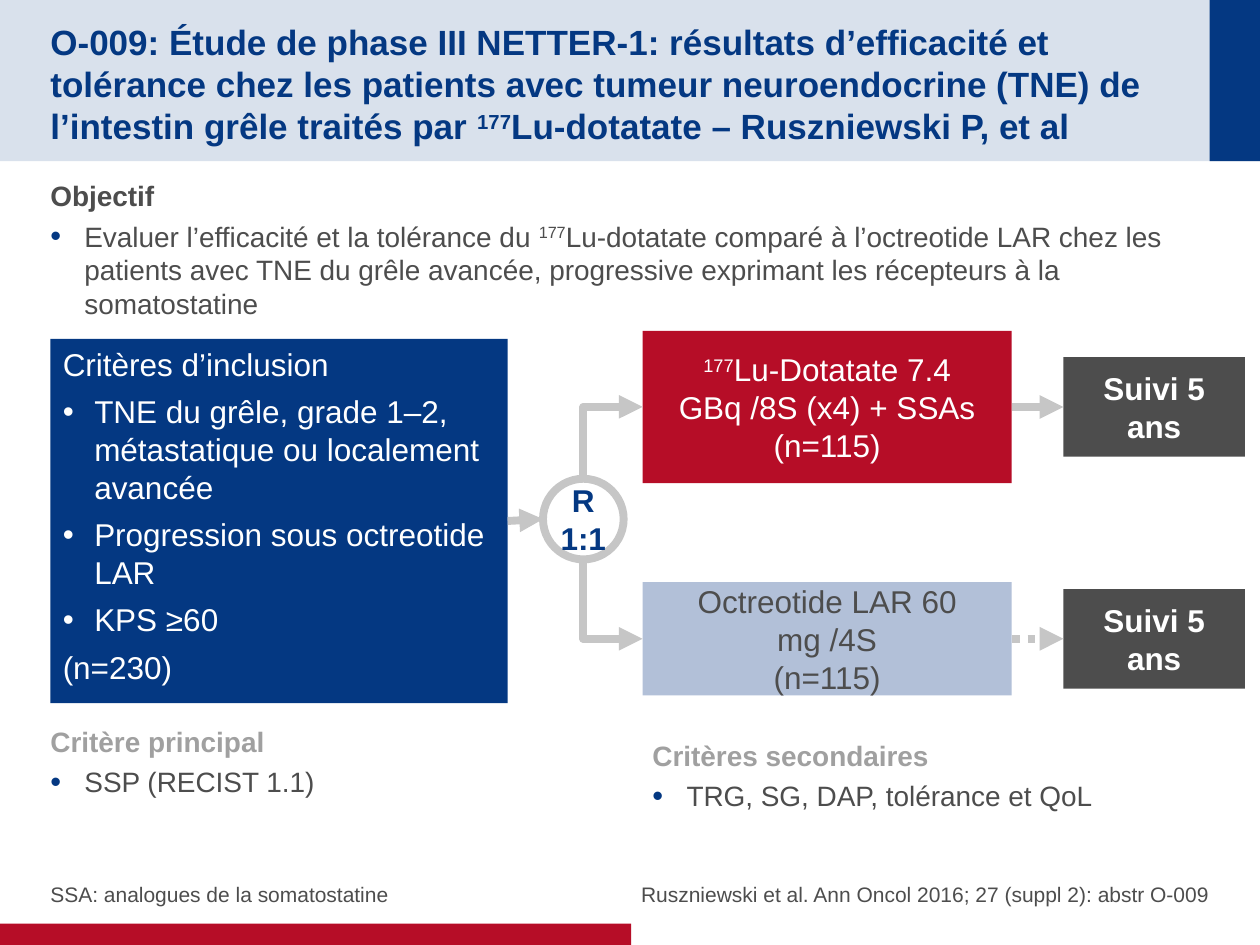
from lxml.etree import SubElement
from pptx import Presentation
from pptx.dml.color import RGBColor
from pptx.enum.dml import MSO_LINE
from pptx.enum.shapes import MSO_CONNECTOR, MSO_SHAPE
from pptx.enum.text import MSO_ANCHOR, MSO_AUTO_SIZE, PP_ALIGN
from pptx.oxml.ns import qn
from pptx.util import Inches, Pt

NAVY, RED, DARK, GREY = "043882", "B60D27", "4D4D4D", "C6C6C6"
PALE, BLUE, SOFT, WHITE = "D9E1EC", "B2C0D8", "A0A0A0", "FFFFFF"
LEFT, MID, RIGHT = PP_ALIGN.LEFT, PP_ALIGN.CENTER, PP_ALIGN.RIGHT
color = RGBColor.from_string

deck = Presentation()
deck.slide_width, deck.slide_height = Inches(10), Inches(7.5)
cell = deck.slide_width // 100  # grid of 100 columns by 75 rows
slide = deck.slides.add_slide(deck.slide_layouts[5])
shapes = slide.shapes


def block(at, fill=None, kind=MSO_SHAPE.RECTANGLE):
    """Add a shape without outline; at is left, top, width, height in cells."""
    shape = shapes.add_shape(kind, *[round(v * cell) for v in at])
    shape.shadow.inherit = False
    shape.line.fill.background()
    if fill:
        shape.fill.solid()
        shape.fill.fore_color.rgb = color(fill)
    else:
        shape.fill.background()
    return shape


def write(shape, paras, size, ink, bold=False, align=LEFT, gap=0,
          pads=(0, 0.5, 0, 0.5), anchor=MSO_ANCHOR.TOP, wrap=True):
    """Fill a shape with (text, changes) pairs; ^ marks off superscripts."""
    frame = shape.text_frame
    sides = ("margin_left", "margin_top", "margin_right", "margin_bottom")
    form = dict(zip(sides, [round(p * cell) for p in pads]))
    form.update(word_wrap=wrap, auto_size=MSO_AUTO_SIZE.NONE,
                vertical_anchor=anchor)
    for key, val in form.items():
        setattr(frame, key, val)
    for n, (text, diff) in enumerate(paras):
        para = frame.add_paragraph() if n else frame.paragraphs[0]
        para.alignment, para.space_after = align, Pt(gap)
        if "indent" in diff:
            props = para._p.get_or_add_pPr()
            depth = round(diff["indent"] * cell)
            props.set("marL", str(depth))
            props.set("indent", str(-depth))
            if "dot" in diff:
                tint = SubElement(props, qn("a:buClr"))
                SubElement(tint, qn("a:srgbClr"), val=diff["dot"])
                SubElement(props, qn("a:buSzPct"), val=diff["scale"])
                SubElement(props, qn("a:buFont"), typeface="Arial")
                SubElement(props, qn("a:buChar"), char="•")
        font = dict(name="Arial", size=Pt(size), bold=diff.get("bold", bold))
        for k, part in enumerate(text.split("^")):
            if not part:
                continue
            run = para.add_run()
            run.text = part
            for key, val in font.items():
                setattr(run.font, key, val)
            run.font.color.rgb = color(diff.get("ink", ink))
            if k % 2:
                run.font._element.set("baseline", "30000")


# Banner, footer bar and title
for at, fill in [((0, 0, 100, 12.8), PALE), ((96, 0, 4, 12.8), NAVY),
                 ((0, 73.3, 50.1, 1.7), RED)]:
    block(at, fill)
title = shapes.title
place = dict(left=4, top=2, width=90.1, height=8.8)
for key, val in place.items():
    setattr(title, key, round(val * cell))
write(title, [("O-009: Étude de phase III NETTER-1: résultats d’efficacité et "
               "tolérance chez les patients avec tumeur neuroendocrine (TNE) de "
               "l’intestin grêle traités par ^177^Lu-dotatate – Ruszniewski P, "
               "et al", {})],
      20, NAVY, True, pads=(0, 0.5, 0, 0), anchor=MSO_ANCHOR.MIDDLE)
shapes._spTree.append(title._element)  # bring in front of the banner

# Headed bullets
point = dict(indent=2.7, dot=NAVY, scale="110000", bold=False, ink=DARK)
for at, pad, ink, head, body in [
    ((4, 13.7, 92, 13), 0, DARK, "Objectif",
     "Evaluer l’efficacité et la tolérance du ^177^Lu-dotatate comparé à "
     "l’octreotide LAR chez les patients avec TNE du grêle avancée, "
     "progressive exprimant les récepteurs à la somatostatine"),
    ((4, 57, 45.2, 10.3), 0, SOFT, "Critère principal", "SSP (RECIST 1.1)"),
    ((50.8, 58.1, 45.2, 8.4), 1, SOFT, "Critères secondaires",
     "TRG, SG, DAP, tolérance et QoL"),
]:
    box = shapes.add_textbox(*[round(v * cell) for v in at])
    write(box, [(head, {}), (body, point)], 16, ink, True, gap=4,
          pads=(pad, 0.5, pad, 0.5))

# Footnotes
for at, text, align, gap in [
    ((4, 70, 27, 2), "SSA: analogues de la somatostatine", LEFT, 0),
    ((50.8, 66.7, 45.2, 5.3),
     "Ruszniewski et al. Ann Oncol 2016; 27 (suppl 2): abstr O-009", RIGHT, 0),
]:
    box = shapes.add_textbox(*[round(v * cell) for v in at])
    write(box, [(text, {})], 12, DARK, align=align, pads=(0,) * 4,
          anchor=MSO_ANCHOR.BOTTOM)

# Trial scheme: inclusion, randomisation, two arms with follow-up
entry = block((4, 26.9, 36.3, 28.9), NAVY)
item = dict(indent=2.5, dot=WHITE, scale="100000")
write(entry, [("Critères d’inclusion", {}),
              ("TNE du grêle, grade 1–2, métastatique ou localement avancée", item),
              ("Progression sous octreotide LAR", item),
              ("KPS ≥60", item), ("(n=230)", dict(indent=3.2))],
      18, WHITE, gap=5.4, pads=(1, 0.5, 1, 0.5))

links = [(MSO_CONNECTOR.STRAIGHT, (40.3, 41.3, 43.1, 41.2), None, entry, None),
         (MSO_CONNECTOR.ELBOW, (51.5, 37.5, 45.8, 32.8), 90, None, None),
         (MSO_CONNECTOR.ELBOW, (51.8, 45.2, 45.5, 49.9), 270, None, None)]
for row, high, fill, ink, text in [
    (32.3, 12.1, RED, WHITE, "^177^Lu-Dotatate 7.4 GBq /8S (x4) + SSAs"),
    (50.7, 9, BLUE, DARK, "Octreotide LAR 60 mg /4S"),
]:
    arm = block((51, row - high / 2, 29.3, high), fill)
    after = block((84.4, row - 3.95, 14.4, 7.9), DARK)
    for box, paras, tint, bold in [
        (arm, [(text, {}), ("(n=115)", {})], ink, False),
        (after, [("Suivi 5 ans", {})], WHITE, True),
    ]:
        write(box, paras, 18, tint, bold, MID, pads=(1, 0, 1, 0),
              anchor=MSO_ANCHOR.MIDDLE)
    links.append((MSO_CONNECTOR.STRAIGHT, (80.3, row, 84.4, row), None, arm, after))

for kind, ends, turn, start, stop in links:
    link = shapes.add_connector(kind, *[round(v * cell) for v in ends])
    if start:
        link.begin_connect(start, 3)
    if stop:
        link.end_connect(stop, 1)
    link.line.color.rgb, link.line.width = color(GREY), Pt(4.5)
    props = link._element.spPr
    if turn:
        props.find(qn("a:xfrm")).set("rot", str(turn * 60000))
        props.find(qn("a:prstGeom")).set("prst", "bentConnector2")
    if start and fill == BLUE and start is arm:
        link.line.dash_style = MSO_LINE.ROUND_DOT
        props.find(qn("a:ln")).find(qn("a:prstDash")).set("val", "sysDot")
    SubElement(props.find(qn("a:ln")), qn("a:tailEnd"), type="triangle")
    SubElement(props, qn("a:effectLst"))

ring = block((43.1, 38, 6.4, 6.4), kind=MSO_SHAPE.OVAL)
ring.line.color.rgb, ring.line.width = color(GREY), Pt(4.5)
write(ring, [("R", {}), ("1:1", {})], 18, NAVY, True, MID,
      pads=(1, 0.5, 1, 0.5), anchor=MSO_ANCHOR.MIDDLE, wrap=False)

deck.save("out.pptx")
